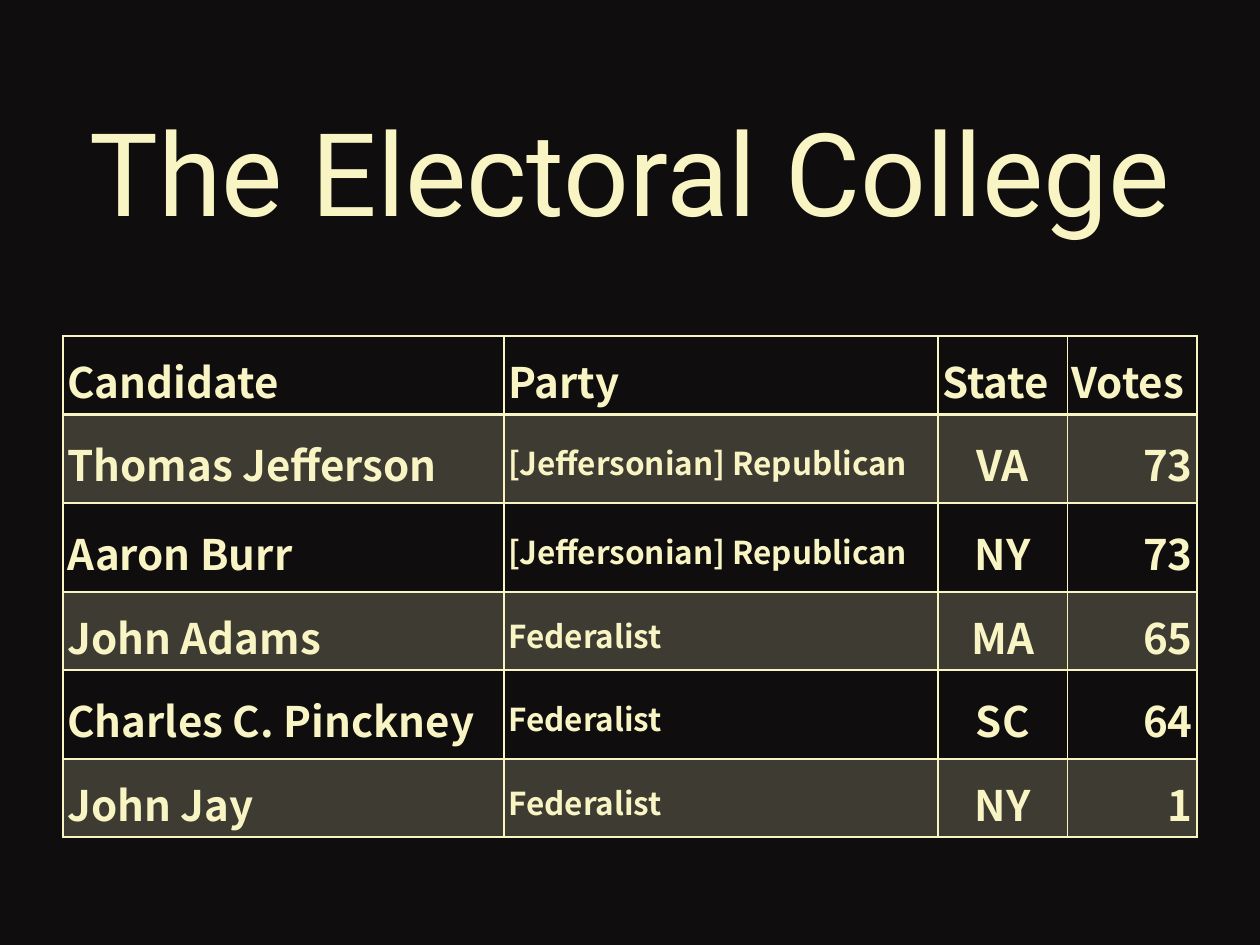
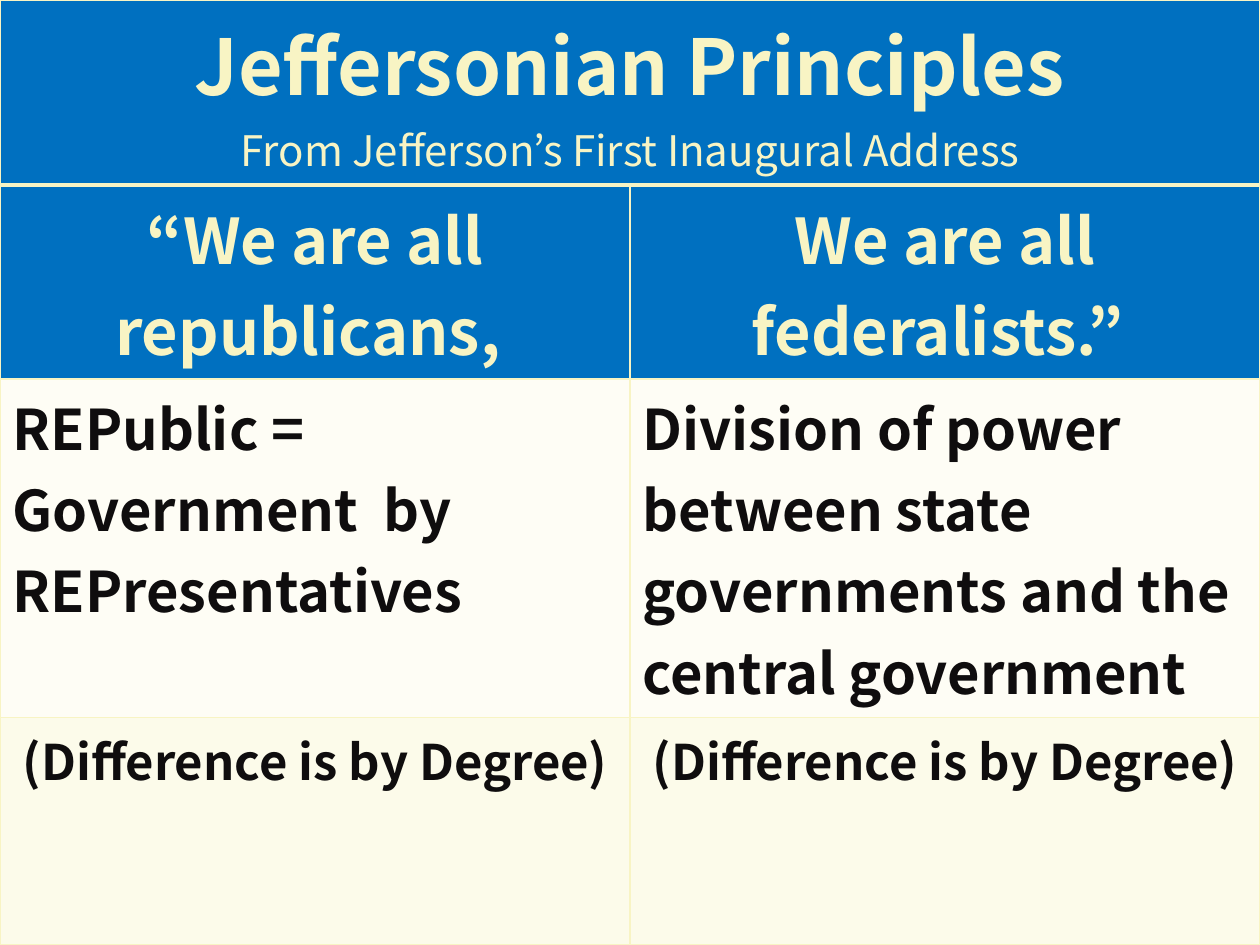
from dataclasses import dataclass

import lxml.etree
import pptx
import pptx.dml.color
import pptx.enum.text
import pptx.oxml.ns
import pptx.util

Pt = pptx.util.Pt
LEFT, CENTER, RIGHT = (getattr(pptx.enum.text.PP_ALIGN, a) for a in ("LEFT", "CENTER", "RIGHT"))
MIDDLE, TOP = pptx.enum.text.MSO_ANCHOR.MIDDLE, pptx.enum.text.MSO_ANCHOR.TOP

INK, CREAM, BLUE = "0F0D0E", "F8F4C4", "0070C0"
PALE, PALE_DARK = "FEFDF5", "FCFBEA"
TITLE_FONT, BODY_FONT = "Roboto", "Noto Sans CJK KR"
SLIDE_W, SLIDE_H = 720, 540


@dataclass(frozen=True)
class CellStyle:
    size: float
    align: pptx.enum.text.PP_ALIGN = LEFT
    anchor: pptx.enum.text.MSO_ANCHOR = MIDDLE
    color: str = CREAM
    fill: str | None = None
    opacity: int = 100


@dataclass(frozen=True)
class TableBox:
    left: float
    top: float
    cols: tuple[float, ...]
    rows: tuple[float, ...]
    header_rule: float


def rgb(color: str) -> pptx.dml.color.RGBColor:
    return pptx.dml.color.RGBColor.from_string(color)


def add_text(p, text: str, *, size: float, color: str = CREAM,
             font: str = BODY_FONT, bold: bool = False) -> None:
    r = p.add_run()
    r.text = text
    r.font.size = Pt(size)
    r.font.name = font
    r.font.bold = bold
    r.font.color.rgb = rgb(color)


def add_slide(prs):
    s = prs.slides.add_slide(prs.slide_layouts[6])
    s.background.fill.solid()
    s.background.fill.fore_color.rgb = rgb(INK)
    return s


def add_title(s, text: str) -> None:
    tf = s.shapes.add_textbox(0, Pt(30), Pt(SLIDE_W), Pt(135)).text_frame
    tf.word_wrap = True
    tf.vertical_anchor = MIDDLE
    p = tf.paragraphs[0]
    p.alignment = CENTER
    add_text(p, text, size=66, font=TITLE_FONT)


def set_borders(cell, top: float, bottom: float) -> None:
    tcPr = cell._tc.get_or_add_tcPr()
    qn = pptx.oxml.ns.qn
    for i, (side, width) in enumerate((("L", 1), ("R", 1), ("T", top), ("B", bottom))):
        ln = lxml.etree.Element(qn(f"a:ln{side}"), w=str(Pt(width)))
        fill = lxml.etree.SubElement(ln, qn("a:solidFill"))
        lxml.etree.SubElement(fill, qn("a:srgbClr"), val=CREAM)
        tcPr.insert(i, ln)


def set_fill(cell, style: CellStyle) -> None:
    if style.fill is None:
        cell.fill.background()
        return
    cell.fill.solid()
    cell.fill.fore_color.rgb = rgb(style.fill)
    if style.opacity < 100:
        qn = pptx.oxml.ns.qn
        clr = cell._tc.tcPr.find(f"{qn('a:solidFill')}/{qn('a:srgbClr')}")
        lxml.etree.SubElement(clr, qn("a:alpha"), val=str(style.opacity * 1000))


def fill_cell(cell, text: str, style: CellStyle):
    """Style the cell, write its bold text and return the paragraph."""
    set_fill(cell, style)
    cell.vertical_anchor = style.anchor
    p = cell.text_frame.paragraphs[0]
    p.alignment = style.align
    add_text(p, text, size=style.size, color=style.color, bold=True)
    return p


def add_table(s, box: TableBox):
    """Add a plain table with cream rules and a heavier rule under its first row."""
    frame = s.shapes.add_table(len(box.rows), len(box.cols), Pt(box.left), Pt(box.top),
                               Pt(sum(box.cols)), Pt(sum(box.rows)))
    table = frame.table
    table.first_row = table.horz_banding = False
    for col, width in zip(table.columns, box.cols):
        col.width = Pt(width)
    for i, (row, height) in enumerate(zip(table.rows, box.rows)):
        row.height = Pt(height)
        for cell in row.cells:
            set_borders(cell, top=box.header_rule if i == 1 else 1,
                        bottom=box.header_rule if i == 0 else 1)
    return table


def build_electoral_college(prs) -> None:
    s = add_slide(prs)
    add_title(s, "The Electoral College")
    results = (
        ("Candidate", "Party", "State", "Votes"),
        ("Thomas Jefferson", "[Jeffersonian] Republican", "VA", "73"),
        ("Aaron Burr", "[Jeffersonian] Republican", "NY", "73"),
        ("John Adams", "Federalist", "MA", "65"),
        ("Charles C. Pinckney", "Federalist", "SC", "64"),
        ("John Jay", "Federalist", "NY", "1"),
    )
    formats = ((24, LEFT), (18, LEFT), (24, CENTER), (24, RIGHT))
    short, tall = 44.7, 50.8
    box = TableBox(36, 192, cols=(252, 248, 74, 74),
                   rows=(short, tall, tall, short, tall, short), header_rule=2)
    table = add_table(s, box)
    for i, result in enumerate(results):
        for j, (text, (size, align)) in enumerate(zip(result, formats)):
            if i == 0:
                size, align = 24, LEFT
            cell = table.cell(i, j)
            cell.margin_left = cell.margin_right = Pt(2.5)
            cell.margin_top = cell.margin_bottom = Pt(2.5)
            style = CellStyle(size, align, fill=CREAM if i % 2 else None, opacity=20)
            p = fill_cell(cell, text, style)
            p.line_spacing = 1.15
            p.space_before = p.space_after = Pt(1)


def build_principles(prs) -> None:
    s = add_slide(prs)
    box = TableBox(0, 0, cols=(SLIDE_W / 2,) * 2,
                   rows=(105.8, 110.8, 193.6, 129.8), header_rule=3)
    table = add_table(s, box)

    heading = CellStyle(44, CENTER, fill=BLUE)
    table.cell(0, 0).merge(table.cell(0, 1))
    p = fill_cell(table.cell(0, 0), "Jeffersonian Principles", heading)
    p.add_line_break()
    add_text(p, "From Jefferson’s First Inaugural Address", size=24)

    degree = "(Difference is by Degree)"
    body = (
        (CellStyle(36, CENTER, fill=BLUE),
         ("“We are all republicans, ", "We are all federalists.” ")),
        (CellStyle(32, anchor=TOP, color=INK, fill=PALE),
         ("REPublic = Government  by REPresentatives",
          "Division of power between state governments and the central government")),
        (CellStyle(28, CENTER, TOP, INK, PALE_DARK), (degree, degree)),
    )
    for i, (style, texts) in enumerate(body, start=1):
        for j, text in enumerate(texts):
            fill_cell(table.cell(i, j), text, style)


def main() -> None:
    prs = pptx.Presentation()
    prs.slide_width, prs.slide_height = Pt(SLIDE_W), Pt(SLIDE_H)
    build_electoral_college(prs)
    build_principles(prs)
    prs.save("out.pptx")


if __name__ == "__main__":
    main()
